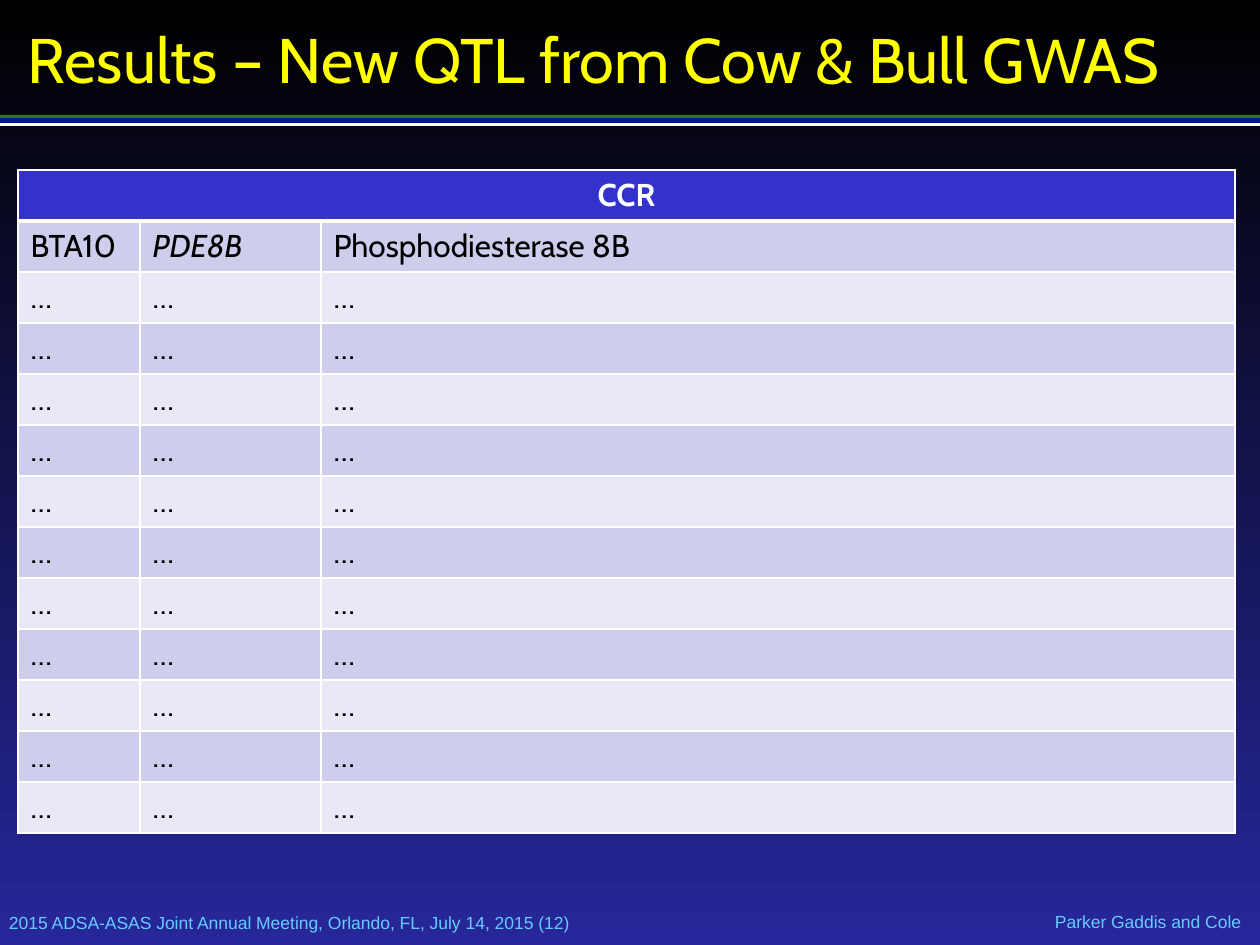
from lxml import etree
from pptx import Presentation
from pptx import util as u
from pptx.dml.color import RGBColor
from pptx.enum import shapes, text
from pptx.oxml import ns

BLACK = RGBColor(0x00, 0x00, 0x00)
NAVY = RGBColor(0x27, 0x27, 0x9B)
GREEN = RGBColor(0x2A, 0x7E, 0x00)
BLUE = RGBColor(0x00, 0x17, 0x99)
WHITE = RGBColor(0xFF, 0xFF, 0xFF)
YELLOW = RGBColor(0xFF, 0xFF, 0x00)
SKY = RGBColor(0x66, 0xCC, 0xFF)
HEADER = RGBColor(0x33, 0x33, 0xCC)
BANDS = RGBColor(0xCE, 0xCE, 0xEC), RGBColor(0xE8, 0xE8, 0xF6)

PX = u.Inches(1) // 126
SLIDE = 1260, 945

TITLE_FONT = dict(size=u.Pt(36), name="Cabin")
FOOTER_FONT = dict(size=u.Pt(10), name="Arial")
CELL_FONT = dict(size=u.Pt(18), name="Cabin")
LEFT, RIGHT, CENTER = text.PP_ALIGN.LEFT, text.PP_ALIGN.RIGHT, text.PP_ALIGN.CENTER

LABELS = [
    ("Parker Gaddis and Cole", (1003, 911, 238, 22), 0, RIGHT, SKY, FOOTER_FONT),
    ("2015 ADSA-ASAS Joint Annual Meeting, Orlando, FL, July 14, 2015 (12)",
     (9, 912, 1019, 22), 0, LEFT, SKY, FOOTER_FONT),
    ("Results – New QTL from Cow & Bull GWAS", (22, 0, 1217, 116), 6, LEFT, YELLOW, TITLE_FONT),
]
STRIPES = [(GREEN, 115, 4), (WHITE, 122, 4), (BLUE, 118, 5)]

TRAIT = "CCR"
GENES = [("BTA10", "PDE8B", "Phosphodiesterase 8B")] + [("…", "…", "…")] * 11
TABLE_LEFT, TABLE_TOP, ROW_HEIGHT = 18, 170, 51
COLUMNS = [122, 181, 914]
SYMBOL_COLUMN = 1


def emu(*lengths):
    return [length * PX for length in lengths]


def write(frame, words, align, color, **font):
    line = frame.paragraphs[0]
    line.alignment = align
    run = line.add_run()
    run.text = words
    run.font.color.rgb = color
    for key, value in font.items():
        setattr(run.font, key, value)


def add_label(slide, words, box, inset, align, color, font):
    frame = slide.shapes.add_textbox(*emu(*box)).text_frame
    frame.word_wrap = True
    frame.vertical_anchor = text.MSO_ANCHOR.MIDDLE
    for side in ("left", "top", "right", "bottom"):
        setattr(frame, f"margin_{side}", inset * PX)
    write(frame, words, align, color, **font)


def add_stripe(slide, color, top, height):
    stripe = slide.shapes.add_shape(
        shapes.MSO_SHAPE.RECTANGLE, *emu(0, top, SLIDE[0], height))
    stripe.shadow.inherit = False
    stripe.fill.solid()
    stripe.fill.fore_color.rgb = color
    stripe.line.fill.background()


def paint_cell(cell, color, top_width, bottom_width):
    cell.fill.solid()
    cell.fill.fore_color.rgb = color
    props = cell._tc.get_or_add_tcPr()
    widths = {"L": 1, "R": 1, "T": top_width, "B": bottom_width}
    for position, (side, width) in enumerate(widths.items()):
        border = etree.Element(ns.qn(f"a:ln{side}"), w=str(u.Pt(width)))
        paint = etree.SubElement(border, ns.qn("a:solidFill"))
        etree.SubElement(paint, ns.qn("a:srgbClr"), val=str(WHITE))
        props.insert(position, border)


def add_genes(slide):
    row_count = len(GENES) + 1
    table = slide.shapes.add_table(
        row_count, len(COLUMNS),
        *emu(TABLE_LEFT, TABLE_TOP, sum(COLUMNS), ROW_HEIGHT * row_count)).table
    for column, width in zip(table.columns, COLUMNS):
        column.width = width * PX
    for row in table.rows:
        row.height = ROW_HEIGHT * PX

    for cell in table.rows[0].cells:
        paint_cell(cell, HEADER, 1, 3)
    trait = table.cell(0, 0)
    trait.merge(table.cell(0, len(COLUMNS) - 1))
    write(trait.text_frame, TRAIT, CENTER, WHITE, bold=True, **CELL_FONT)

    for r, gene in enumerate(GENES, start=1):
        for c, words in enumerate(gene):
            cell = table.cell(r, c)
            paint_cell(cell, BANDS[(r - 1) % 2], 3 if r == 1 else 1, 1)
            write(cell.text_frame, words, LEFT, BLACK, bold=False,
                  italic=r == 1 and c == SYMBOL_COLUMN, **CELL_FONT)


def main():
    deck = Presentation()
    deck.slide_width, deck.slide_height = emu(*SLIDE)
    slide = deck.slides.add_slide(deck.slide_layouts[6])
    backdrop = slide.background.fill
    backdrop.gradient()
    backdrop.gradient_angle = 270
    for stop, color in zip(backdrop.gradient_stops, (BLACK, NAVY)):
        stop.color.rgb = color
    for stripe in STRIPES:
        add_stripe(slide, *stripe)
    for label in LABELS:
        add_label(slide, *label)
    add_genes(slide)
    deck.save("out.pptx")


if __name__ == "__main__":
    main()
